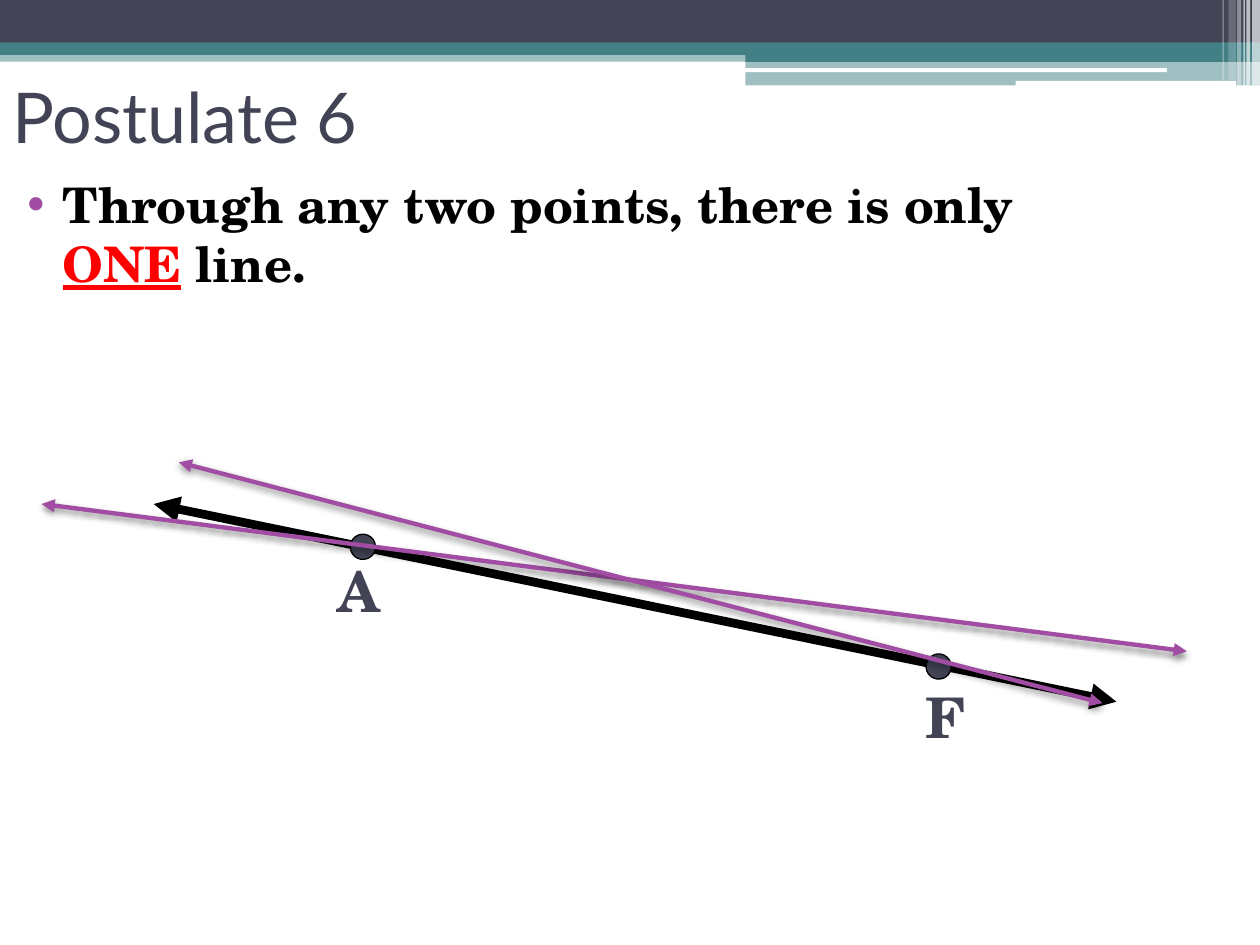
"""Builds a geometry slide on the postulate that two points determine one line."""
from lxml import etree
from pptx import Presentation
from pptx.dml.color import RGBColor
from pptx.enum.shapes import MSO_CONNECTOR, MSO_SHAPE
from pptx.enum.text import MSO_ANCHOR
from pptx.oxml import parse_xml
from pptx.oxml.ns import qn
from pptx.util import Pt

STRAIGHT = MSO_CONNECTOR.STRAIGHT
RECTANGLE = MSO_SHAPE.RECTANGLE
ROUNDED = MSO_SHAPE.ROUNDED_RECTANGLE
OVAL = MSO_SHAPE.OVAL
TOP, MIDDLE = MSO_ANCHOR.TOP, MSO_ANCHOR.MIDDLE
NAMESPACE = "http://schemas.openxmlformats.org/drawingml/2006/main"
NAVY, TEAL, PURPLE = "424456", "438086", "A04DA3"
WHITE, BLACK, RED = "FFFFFF", "000000", "FF0000"
SERIF, SANS = "TeX Gyre Schola", "Lato"


def paint(fill, color, opacity=100):
    fill.solid()
    fill.fore_color.rgb = RGBColor.from_string(color)
    if opacity < 100:
        color_element = fill._xPr.find(qn("a:solidFill"))[0]
        etree.SubElement(color_element, qn("a:alpha"), val=str(opacity * 1000))


def add_text(*runs, box, size, font, bold=False, wrap=True, anchor=TOP):
    frame = slide.shapes.add_textbox(*map(Pt, box)).text_frame
    frame.word_wrap = wrap
    frame.vertical_anchor = anchor
    paragraph = frame.paragraphs[0]
    for text, color, underline in runs:
        run = paragraph.add_run()
        run.text = text
        run.font.name, run.font.size = font, Pt(size)
        run.font.bold, run.font.underline = bold, underline
        paint(run.font.fill, color)
    return paragraph


presentation = Presentation()
presentation.slide_width, presentation.slide_height = Pt(720), Pt(540)
slide = presentation.slides.add_slide(presentation.slide_layouts[6])

header_bands = [
    (RECTANGLE, 0, 28.8, 720, 6.5, TEAL, 50),
    (RECTANGLE, 0, 0, 720, 24.5, NAVY, 100),
    (RECTANGLE, 0, 24.2, 720, 7.2, TEAL, 100),
    (RECTANGLE, 426, 28.2, 294, 7.2, TEAL, 100),
    (RECTANGLE, 426, 34.6, 294, 14.2, TEAL, 50),
    (ROUNDED, 425.6, 39, 241.2, 2.2, WHITE, 100),
    (ROUNDED, 580.4, 46.3, 126, 2.9, WHITE, 100),
    (RECTANGLE, 715.5, 0, 4.5, 49, WHITE, 65),
    (RECTANGLE, 712.2, 0, 2.2, 49, WHITE, 65),
    (RECTANGLE, 710.6, 0, 0.8, 49, WHITE, 60),
    (RECTANGLE, 707, 0, 2.2, 49, WHITE, 40),
    (RECTANGLE, 702, 0, 4.3, 46, WHITE, 20),
    (RECTANGLE, 698.6, 0, 0.8, 46, WHITE, 30),
]
for kind, left, top, width, height, color, opacity in header_bands:
    band = slide.shapes.add_shape(kind, Pt(left), Pt(top), Pt(width), Pt(height))
    band.shadow.inherit = False
    band.line.fill.background()
    paint(band.fill, color, opacity)

drawn_lines = [
    ((87.8, 288, 638, 401), BLACK, 5, False),
    ((23.8, 288, 678.2, 372.2), PURPLE, 2.5, True),
    ((102.2, 264.2, 630, 401.8), PURPLE, 2.5, True),
]
connectors = []
for ends, color, width, has_shadow in drawn_lines:
    connector = slide.shapes.add_connector(STRAIGHT, *map(Pt, ends))
    connector.line.width = Pt(width)
    paint(connector.line.fill, color)
    outline = connector.line._get_or_add_ln()
    for end in ("a:headEnd", "a:tailEnd"):
        etree.SubElement(outline, qn(end), type="triangle")
    effects = etree.SubElement(connector._element.spPr, qn("a:effectLst"))
    if has_shadow:
        effects.append(parse_xml(
            f'<a:outerShdw xmlns:a="{NAMESPACE}" blurRad="{Pt(4)}" dist="{Pt(2)}" '
            f'dir="5400000" rotWithShape="0"><a:srgbClr val="{BLACK}">'
            '<a:alpha val="45000"/></a:srgbClr></a:outerShdw>'))
    connectors.append(connector)

points = [
    ("A", 200.2, 305.3, (185.8, 314.6, 37.4, 45.4)),
    ("F", 529.2, 373.7, (522, 386.6, 33.8, 45.4)),
]
for name, left, top, label_box in points:
    point = slide.shapes.add_shape(OVAL, Pt(left), Pt(top), Pt(14.4), Pt(14.4))
    point.shadow.inherit = False
    point.rotation = 25.2
    point.line.width = Pt(0.75)
    paint(point.fill, NAVY)
    paint(point.line.fill, BLACK)
    add_text((name, NAVY, False), box=label_box, size=32, font=SERIF, bold=True, wrap=False)

for connector in connectors[1:]:
    slide.shapes._spTree.append(connector._element)

add_text(("Postulate 6", NAVY, False), box=(0, 24, 648, 84), size=40, font=SANS, anchor=MIDDLE)
statement = add_text(
    ("Through any two points, there is only ", BLACK, False),
    ("ONE", RED, True),
    (" line.", BLACK, False),
    box=(0, 96, 648, 340), size=28, font=SERIF, bold=True)
statement.space_before = Pt(3)
properties = statement._p.get_or_add_pPr()
properties.set("marL", str(Pt(28.8)))
properties.set("indent", str(Pt(-20.2)))
bullet_color = etree.SubElement(properties, qn("a:buClr"))
etree.SubElement(bullet_color, qn("a:srgbClr"), val=PURPLE)
etree.SubElement(properties, qn("a:buFont"), typeface="Arial")
etree.SubElement(properties, qn("a:buChar"), char="•")

presentation.save("out.pptx")
